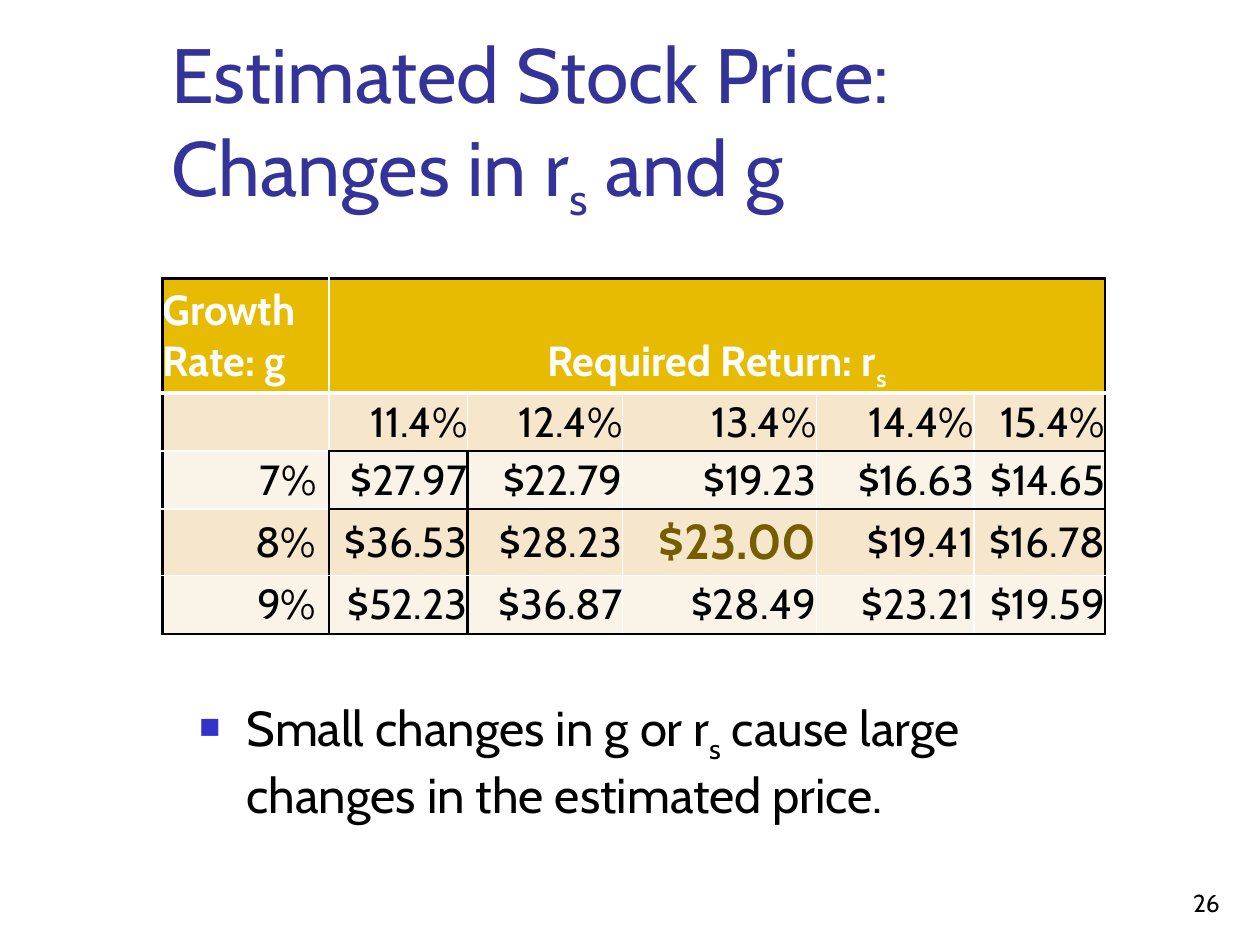
"""Build the slide showing how the stock price responds to required return and growth."""
import pptx
import pptx.dml.color
import pptx.enum.text
import pptx.oxml
import pptx.oxml.ns
import pptx.util
from pptx.util import Inches

ALIGN = pptx.enum.text.PP_ALIGN
ANCHOR = pptx.enum.text.MSO_ANCHOR
NS = pptx.oxml.ns.nsdecls("a")


def color(hex_value):
    return pptx.dml.color.RGBColor.from_string(hex_value)


def write(p, parts, size, hex_value, bold=False, align=ALIGN.LEFT):
    p.text = parts[0]
    p.alignment = align
    for part in parts[1:]:
        p.add_run().text = part
    for r in p.runs:
        r.font.name = "Cabin"
        r.font.size = pptx.util.Pt(size)
        r.font.bold = bold
        r.font.color.rgb = color(hex_value)
        if r.text == "s":
            r.font._element.set("baseline", "-25000")


prs = pptx.Presentation()
prs.slide_width, prs.slide_height = Inches(10), Inches(7.5)
s = prs.slides.add_slide(prs.slide_layouts[5])

title = s.shapes.title
title.left, title.top = Inches(1.26), Inches(0.23)
title.width, title.height = Inches(8.52), Inches(1.6)
tf = title.text_frame
tf.vertical_anchor = ANCHOR.BOTTOM
tf.auto_size = pptx.enum.text.MSO_AUTO_SIZE.NONE
write(tf.paragraphs[0], ["Estimated Stock Price:\vChanges in r", "s", " and g"], 44, "333399")

col_widths = [1.32, 1.1, 1.23, 1.54, 1.25, 1.04]
row_heights = [0.91, 0.46, 0.46, 0.53, 0.46]
rows = [
    ["Growth Rate: g", "Required Return: r", "", "", "", ""],
    ["", "11.4%", "12.4%", "13.4%", "14.4%", "15.4%"],
    ["7%", "$27.97", "$22.79", "$19.23", "$16.63", "$14.65"],
    ["8%", "$36.53", "$28.23", "$23.00", "$19.41", "$16.78"],
    ["9%", "$52.23", "$36.87", "$28.49", "$23.21", "$19.59"],
]
fills = ["E7BB01", "F6E7CC", "FAF3E7", "F6E7CC", "FAF3E7"]
n_rows, n_cols = len(rows), len(col_widths)
black, thin, thick = ("000000", 1.5), ("FFFFFF", 1), ("FFFFFF", 3)

h_edges = [[thin] * n_cols for _ in range(n_rows + 1)]
h_edges[0] = h_edges[n_rows] = [black] * n_cols
h_edges[1] = [thick] * n_cols
h_edges[2] = h_edges[3] = [thin] + [black] * (n_cols - 1)
header_edges = [black, thin] + [black] * (n_cols - 1)
label_edges = [black] + [thin] * (n_cols - 1) + [black]
price_edges = [black] * 3 + [thin] * (n_cols - 3) + [black]
v_edges = [header_edges, label_edges, price_edges, price_edges, price_edges]

table = s.shapes.add_table(n_rows, n_cols, Inches(1.29), Inches(2.21),
                           Inches(7.48), Inches(2.82)).table
for column, width in zip(table.columns, col_widths):
    column.width = Inches(width)
for row, height in zip(table.rows, row_heights):
    row.height = Inches(height)
table.cell(0, 1).merge(table.cell(0, n_cols - 1))

for i, values in enumerate(rows):
    for j, value in enumerate(values):
        cell = table.cell(i, j)
        cell.margin_left = cell.margin_top = cell.margin_bottom = 0
        cell.margin_right = Inches(0.1 if j == 0 and i > 1 else 0)
        cell.vertical_anchor = ANCHOR.BOTTOM if (i, j) == (0, 1) else ANCHOR.MIDDLE
        edges = {"L": v_edges[i][j], "R": v_edges[i][j + 1],
                 "T": h_edges[i][j], "B": h_edges[i + 1][j]}
        for side, (line_color, width) in edges.items():
            cell._tc.get_or_add_tcPr().append(pptx.oxml.parse_xml(
                f'<a:ln{side} {NS} w="{pptx.util.Pt(width)}"><a:solidFill>'
                f'<a:srgbClr val="{line_color}"/></a:solidFill></a:ln{side}>'))
        cell.fill.solid()
        cell.fill.fore_color.rgb = color(fills[i])
        p = cell.text_frame.paragraphs[0]
        if i == 0 and value:
            parts = [value, "s"] if j else [value]
            write(p, parts, 24, "FFFFFF", True, ALIGN.CENTER if j else ALIGN.LEFT)
        elif value == "$23.00":
            write(p, [value], 28, "745E00", True, ALIGN.RIGHT)
        elif value:
            write(p, [value], 24, "000000", align=ALIGN.RIGHT)

tf = s.shapes.add_textbox(Inches(1.48), Inches(5.49), Inches(7.35), Inches(1.34)).text_frame
tf.word_wrap = True
p = tf.paragraphs[0]
pPr = p._p.get_or_add_pPr()
pPr.set("marL", str(Inches(0.38)))
pPr.set("indent", str(Inches(-0.38)))
for bullet in ('<a:buClr {}><a:srgbClr val="3333CC"/></a:buClr>',
               '<a:buSzPct {} val="60000"/>', '<a:buChar {} char="■"/>'):
    pPr.append(pptx.oxml.parse_xml(bullet.format(NS)))
write(p, ["Small changes in g or r", "s", " cause large changes in the estimated price."],
      28, "000000")

tf = s.shapes.add_textbox(Inches(7.7), Inches(6.83), Inches(2.08), Inches(0.5)).text_frame
tf.word_wrap = True
tf.vertical_anchor = ANCHOR.BOTTOM
write(tf.paragraphs[0], ["26"], 14, "000000", align=ALIGN.RIGHT)

prs.save("out.pptx")
